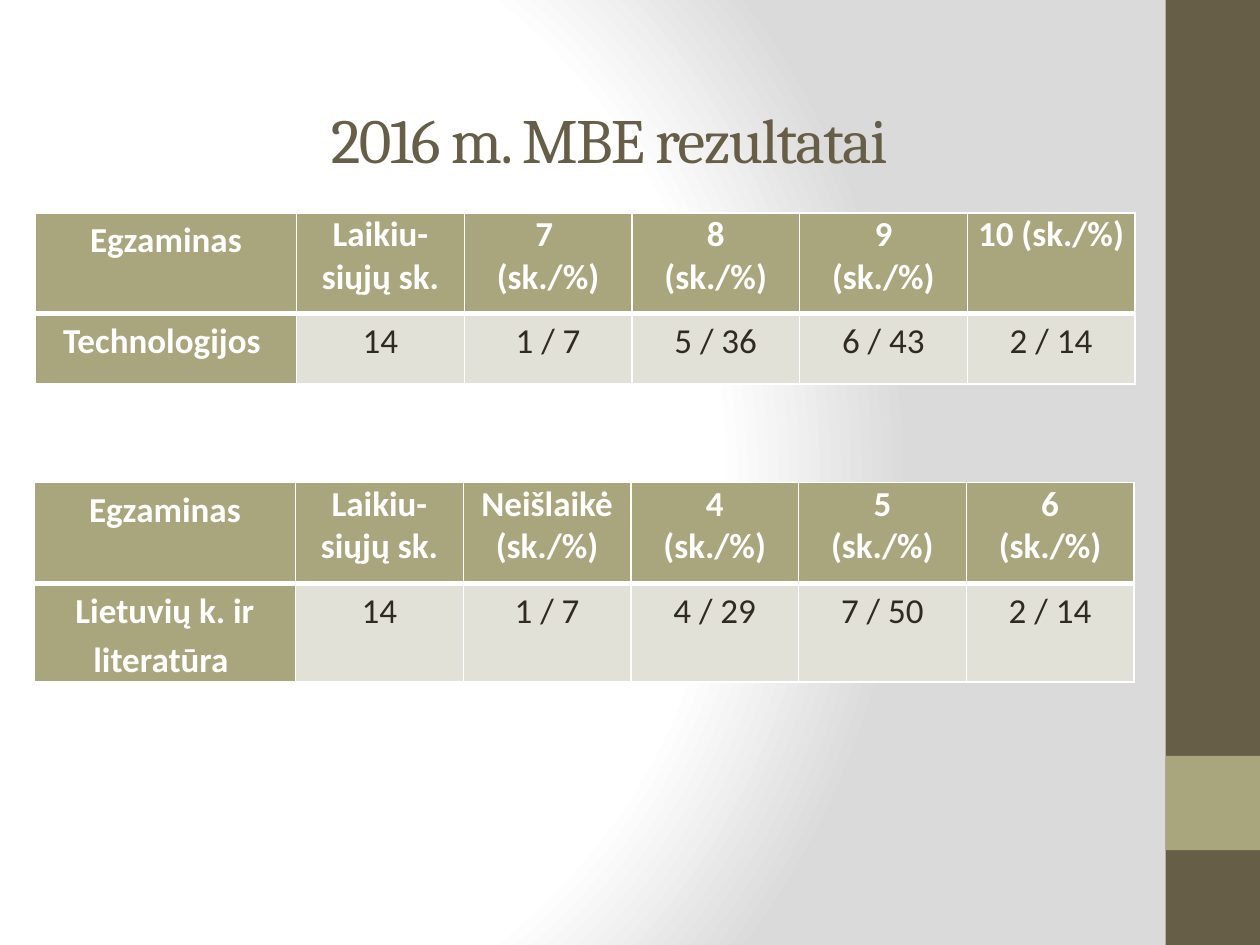
import lxml.etree
import pptx
import pptx.dml.color
import pptx.enum.shapes
import pptx.enum.text
import pptx.oxml
import pptx.oxml.ns
import pptx.util
from pptx.util import Cm

COLORS = {
    "white": "FFFFFF",
    "grey": "DADADA",
    "brown": "675E47",
    "olive": "A9A57C",
    "pale": "E2E1D7",
    "ink": "2F2B20",
}
SCORE = "(sk./%)"
COLUMN_WIDTHS = [5.27] + [3.38] * 5


def rgb(name):
    return pptx.dml.color.RGBColor.from_string(COLORS[name])


class ResultsSlide:
    title_font = "Cambria"
    body_font = "Calibri"
    body_size = 20

    def __init__(self, presentation):
        self.slide = presentation.slides.add_slide(presentation.slide_layouts[5])

    def background(self):
        """Fill the background with a circular gradient centred left of the middle."""
        self.slide.background.fill.gradient()
        gradient = next(self.slide.element.iter(pptx.oxml.ns.qn("a:gradFill")))
        stops = "".join(
            f'<a:gs pos="{percent * 1000}"><a:srgbClr val="{COLORS[color]}"/></a:gs>'
            for percent, color in [(0, "white"), (75, "white"), (100, "grey")]
        )
        circular = pptx.oxml.parse_xml(
            f'<a:gradFill {pptx.oxml.ns.nsdecls("a")} rotWithShape="1">'
            f"<a:gsLst>{stops}</a:gsLst>"
            '<a:path path="circle">'
            '<a:fillToRect l="20000" t="50000" r="100000" b="50000"/>'
            "</a:path></a:gradFill>"
        )
        gradient.getparent().replace(gradient, circular)

    def bar(self, left, top, width, height, color):
        bar = self.slide.shapes.add_shape(
            pptx.enum.shapes.MSO_SHAPE.RECTANGLE,
            Cm(left), Cm(top), Cm(width), Cm(height),
        )
        bar.shadow.inherit = False
        bar.fill.solid()
        bar.fill.fore_color.rgb = rgb(color)
        bar.line.fill.background()

    def run(self, paragraph, text, font, size, color, bold=False):
        run = paragraph.add_run()
        run.text = text
        run.font.name = font
        run.font.size = pptx.util.Pt(size)
        run.font.bold = bold
        run.font.color.rgb = rgb(color)
        return run

    def title(self, text, left, top, width, height):
        title = self.slide.shapes.title
        title.left, title.top = Cm(left), Cm(top)
        title.width, title.height = Cm(width), Cm(height)
        title.text_frame.word_wrap = True
        title.text_frame.vertical_anchor = pptx.enum.text.MSO_ANCHOR.MIDDLE
        paragraph = title.text_frame.paragraphs[0]
        paragraph.alignment = pptx.enum.text.PP_ALIGN.CENTER
        run = self.run(paragraph, text, self.title_font, 36, "brown")
        run.font._element.set("spc", "-100")

    def borders(self, cell, top, bottom):
        """Draw white cell borders; top and bottom are widths in points."""
        properties = cell._tc.get_or_add_tcPr()
        for side, width in {"L": 1, "R": 1, "T": top, "B": bottom}.items():
            line = lxml.etree.SubElement(
                properties, pptx.oxml.ns.qn(f"a:ln{side}"), w=str(pptx.util.Pt(width))
            )
            fill = lxml.etree.SubElement(line, pptx.oxml.ns.qn("a:solidFill"))
            lxml.etree.SubElement(
                fill, pptx.oxml.ns.qn("a:srgbClr"), val=COLORS["white"]
            )

    def cell(self, cell, text, is_header, is_label):
        emphasized = is_header or is_label
        self.borders(cell, top=1 if is_header else 3, bottom=3 if is_header else 1)
        cell.fill.solid()
        cell.fill.fore_color.rgb = rgb("olive" if emphasized else "pale")
        score_heading = is_header and not is_label
        cell.margin_left = cell.margin_right = Cm(0.18 if score_heading else 0.2)
        cell.margin_top = cell.margin_bottom = 0
        for index, line in enumerate(text.split("\n")):
            frame = cell.text_frame
            paragraph = frame.add_paragraph() if index else frame.paragraphs[0]
            paragraph.alignment = pptx.enum.text.PP_ALIGN.CENTER
            if not score_heading:
                paragraph.line_spacing = 1.15
            self.run(paragraph, line, self.body_font, self.body_size,
                     "white" if emphasized else "ink", emphasized)

    def table(self, left, top, row_heights, rows):
        table = self.slide.shapes.add_table(
            len(rows), len(COLUMN_WIDTHS), Cm(left), Cm(top),
            Cm(sum(COLUMN_WIDTHS)), Cm(sum(row_heights)),
        ).table
        for column, width in zip(table.columns, COLUMN_WIDTHS):
            column.width = Cm(width)
        for row, height in zip(table.rows, row_heights):
            row.height = Cm(height)
        for r, texts in enumerate(rows):
            for c, text in enumerate(texts):
                self.cell(table.cell(r, c), text, r == 0, c == 0)


def main():
    presentation = pptx.Presentation()
    presentation.slide_width, presentation.slide_height = Cm(25.4), Cm(19.05)
    results = ResultsSlide(presentation)
    results.background()
    results.bar(23.5, 0, 1.9, 19.05, "brown")
    results.bar(23.5, 15.24, 1.9, 1.9, "olive")

    exam_headings = ["Egzaminas", "Laikiu-siųjų sk."]
    results.table(0.71, 4.29, [2.03, 1.42], [
        exam_headings + [f"7 \n{SCORE}", f"8\n{SCORE}", f"9\n{SCORE}", f"10 {SCORE}"],
        ["Technologijos ", "14", "1 / 7", "5 / 36", "6 / 43", "2 / 14"],
    ])
    results.title("2016 m. MBE rezultatai", 1.7, 1.2, 21.16, 3.18)
    results.table(0.69, 9.73, [2.03, 1.96], [
        exam_headings + [f"{grade}\n{SCORE}" for grade in ("Neišlaikė", "4", "5", "6")],
        ["Lietuvių k. ir literatūra ", "14", "1 / 7", "4 / 29", "7 / 50", "2 / 14"],
    ])
    presentation.save("out.pptx")


if __name__ == "__main__":
    main()
